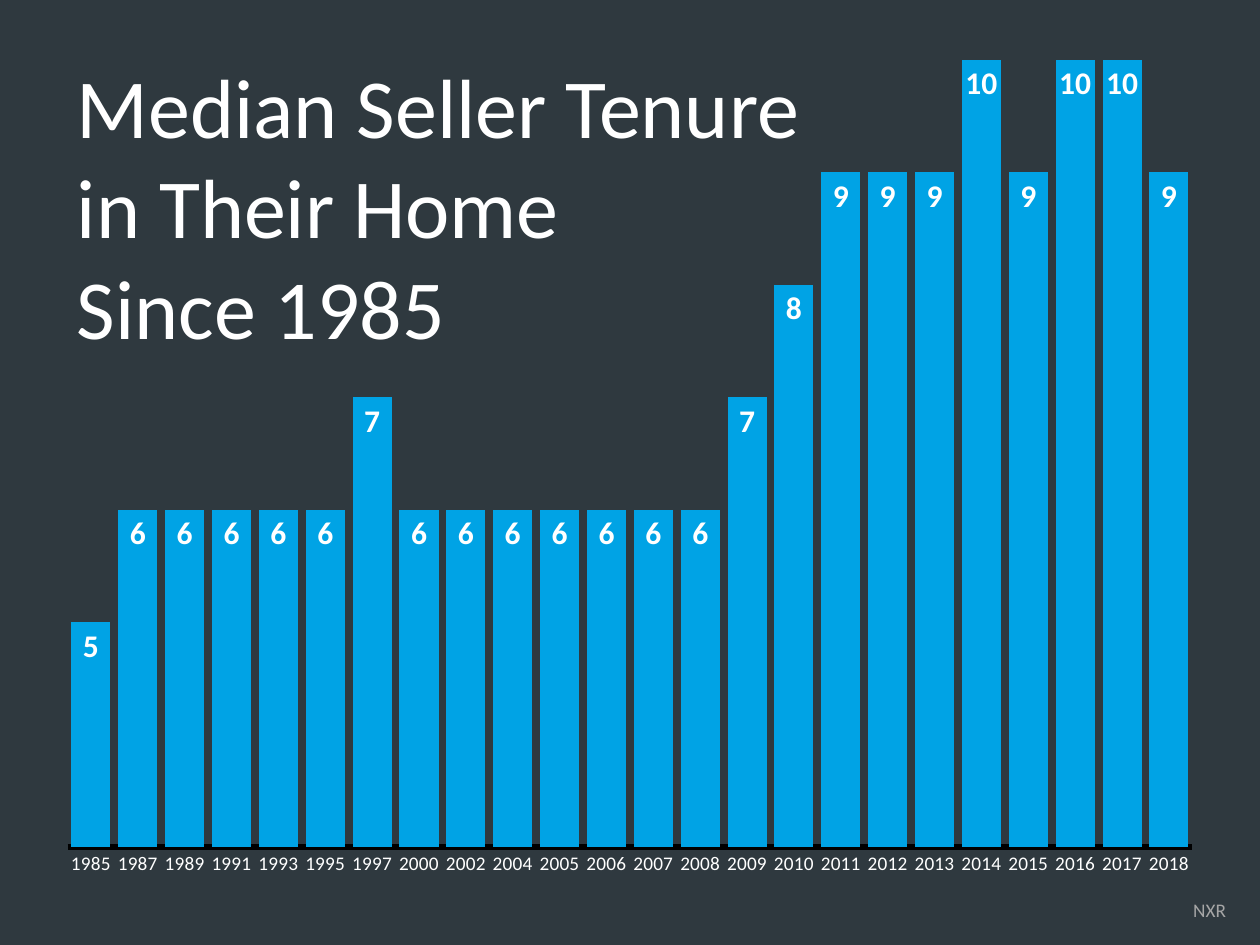
from lxml.etree import SubElement
from pptx import Presentation
from pptx.chart.data import CategoryChartData
from pptx.dml.color import RGBColor
from pptx.enum.chart import XL_CHART_TYPE, XL_LABEL_POSITION, XL_TICK_MARK
from pptx.enum.text import MSO_ANCHOR, MSO_AUTO_SIZE, PP_ALIGN
from pptx.oxml.ns import qn
from pptx.util import Inches, Pt

TITLE = ["Median Seller Tenure", "in Their Home", "Since 1985"]
SOURCE = "NXR"
TENURE = {
    "1985": 5, "1987": 6, "1989": 6, "1991": 6, "1993": 6, "1995": 6,
    "1997": 7, "2000": 6, "2002": 6, "2004": 6, "2005": 6, "2006": 6,
    "2007": 6, "2008": 6, "2009": 7, "2010": 8, "2011": 9, "2012": 9,
    "2013": 9, "2014": 10, "2015": 9, "2016": 10, "2017": 10, "2018": 9,
}
# Plot area as shares of the chart frame
PLOT = {"x": 0.02, "y": 0.02, "w": 0.96, "h": 0.93}
BACK, BLUE, WHITE, GREY, BLACK = "2F393F", "00A3E5", "FFFFFF", "A6A6A6", "000000"


def paint(fill, color):
    fill.solid()
    fill.fore_color.rgb = RGBColor.from_string(color)


def style(font, size, color, bold=False):
    for key, value in {"name": "Calibri", "size": Pt(size), "bold": bold}.items():
        setattr(font, key, value)
    paint(font.fill, color)


def place(shape, *box):
    for key, value in zip(("left", "top", "width", "height"), box):
        setattr(shape, key, Inches(value))


def write(shape, lines, size, color, align):
    frame = shape.text_frame
    frame.text = "\n".join(lines)
    frame.word_wrap = True
    frame.auto_size = MSO_AUTO_SIZE.NONE
    frame.vertical_anchor = MSO_ANCHOR.TOP
    for para in frame.paragraphs:
        para.alignment = align
        para.line_spacing = 1.0
        para.space_before = Pt(0)
        style(para.runs[0].font, size, color)


def fix_plot(chart):
    """Pin the inner plot area to the PLOT shares."""
    area = chart._chartSpace.find(".//" + qn("c:plotArea"))
    layout = area.find(qn("c:layout"))
    if layout is None:
        layout = SubElement(area, qn("c:layout"))
        area.insert(0, layout)
    manual = SubElement(layout, qn("c:manualLayout"))
    modes = {"layoutTarget": "inner", "xMode": "edge", "yMode": "edge"}
    for key, value in {**modes, **PLOT}.items():
        SubElement(manual, qn("c:" + key)).set("val", str(value))


def add_bars(slide):
    data = CategoryChartData()
    data.categories = list(TENURE)
    data.add_series("Series 1", list(TENURE.values()))
    box = [Inches(n) for n in (0.35, 0.34, 9.3, 6.72)]
    chart = slide.shapes.add_chart(XL_CHART_TYPE.COLUMN_CLUSTERED, *box, data).chart
    chart.has_legend = chart.has_title = False
    style(chart.font, 10, BLACK)

    scale = chart.value_axis
    scale.minimum_scale, scale.maximum_scale = 3, 10
    scale.has_major_gridlines = scale.visible = False
    years = chart.category_axis
    years.major_tick_mark = XL_TICK_MARK.NONE
    years.format.line.width = Pt(3)
    paint(years.format.line.fill, BLACK)
    style(years.tick_labels.font, 11, WHITE)

    plot = chart.plots[0]
    plot.gap_width = 20
    plot.vary_by_categories = False
    bars = plot.series[0]
    paint(bars.format.fill, BLUE)
    labels = bars.data_labels
    labels.show_value = True
    labels.position = XL_LABEL_POSITION.INSIDE_END
    style(labels.font, 18, WHITE, True)
    fix_plot(chart)


def main():
    deck = Presentation()
    deck.slide_width, deck.slide_height = Inches(10), Inches(7.5)
    slide = deck.slides.add_slide(deck.slide_layouts[5])
    paint(slide.background.fill, BACK)
    add_bars(slide)

    source = slide.shapes.add_textbox(0, 0, 0, 0)
    place(source, 6.33, 7.08, 3.5, 0.29)
    write(source, [SOURCE], 11, GREY, PP_ALIGN.RIGHT)

    title = slide.shapes.title
    place(title, 0.51, 0.38, 9.49, 2.52)
    write(title, TITLE, 48, WHITE, PP_ALIGN.LEFT)
    deck.save("out.pptx")


if __name__ == "__main__":
    main()
